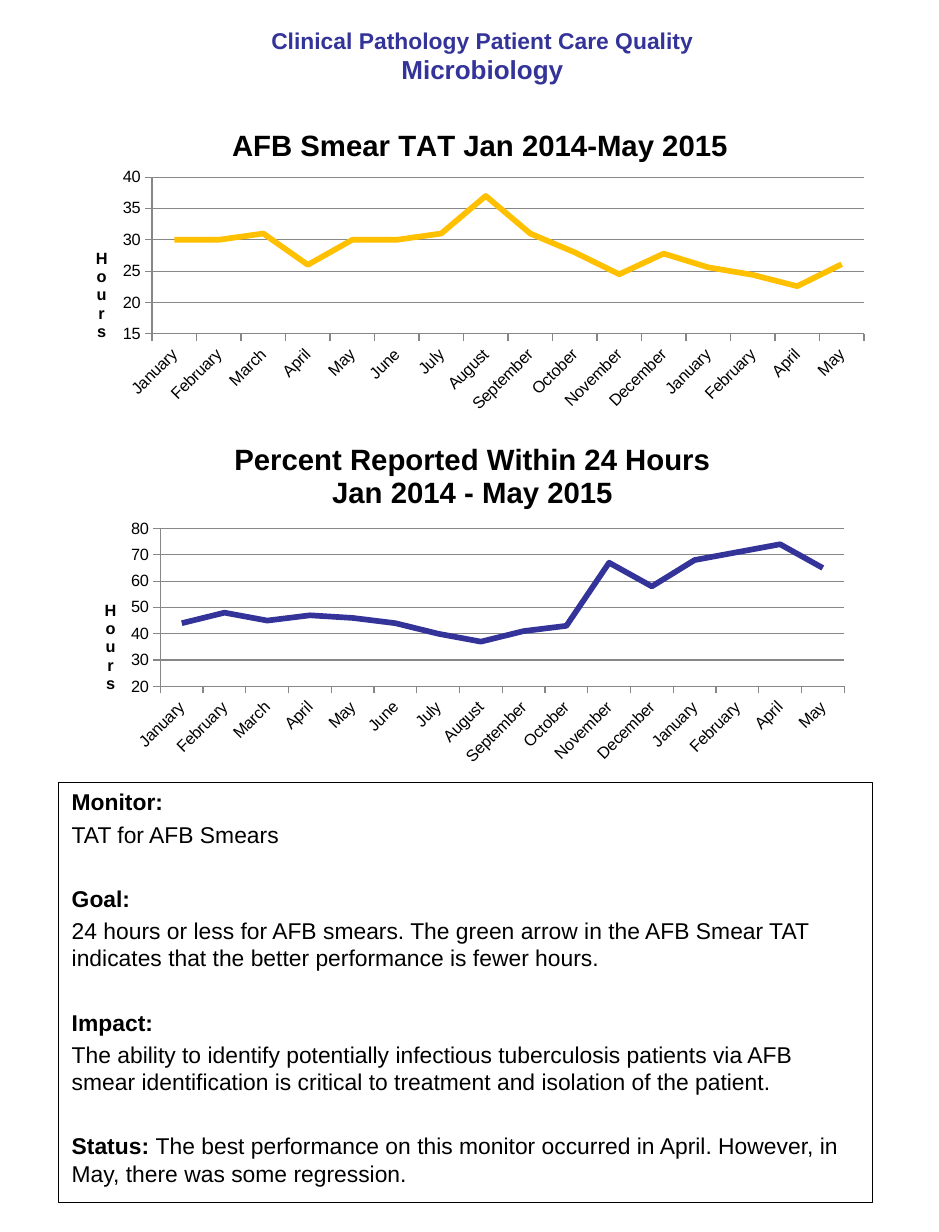
from pptx import Presentation
from pptx import util as u
from pptx.chart import data as chart_data
from pptx.dml.color import RGBColor
from pptx.enum import chart as chart_enum
from pptx.enum import text
from pptx.oxml import parse_xml
from pptx.oxml.ns import nsdecls, qn

BLACK = RGBColor(0x00, 0x00, 0x00)
INDIGO = RGBColor(0x33, 0x33, 0x99)
AMBER = RGBColor(0xFF, 0xC0, 0x00)
GRID_GRAY = RGBColor(0x87, 0x87, 0x87)
FONT_NAME = "Arial"

YEAR = ["January", "February", "March", "April", "May", "June", "July", "August",
        "September", "October", "November", "December"]
MONTHS = YEAR + YEAR[:5]
SMEAR_HOURS = [30, 30, 31, 26, 30, 30, 31, 37, 31, 28, 24.5, 27.8, 25.6, 24.4, 22.6, 26.1]
PERCENT_REPORTED = [44, 48, 45, 47, 46, 44, 40, 37, 41, 43, 67, 58, 68, 71, 74, 65]
CHART_MONTHS = YEAR + YEAR[:2] + YEAR[3:5]

MONITOR_TEXT = [
    [("Monitor:", True)],
    [("TAT for AFB Smears", False)],
    [("Goal:", True)],
    [("24 hours or less for AFB smears. The green arrow in the AFB Smear TAT "
      "indicates that the better performance is fewer hours.", False)],
    [("Impact:", True)],
    [("The ability to identify potentially infectious tuberculosis patients via AFB "
      "smear identification is critical to treatment and isolation of the patient.", False)],
    [("Status: ", True),
     ("The best performance on this monitor occurred in April. However, in May, "
      "there was some regression.", False)],
]


def format_font(font, size, color=BLACK, bold=False):
    font.name = FONT_NAME
    font.size = u.Pt(size)
    font.bold = bold
    font.color.rgb = color


def place(shape, left, top, width, height):
    shape.left, shape.top = u.Pt(left), u.Pt(top)
    shape.width, shape.height = u.Pt(width), u.Pt(height)


def fill_title(shape):
    place(shape, 36.7, 18, 518.4, 32.4)
    frame = shape.text_frame
    frame.text = "Clinical Pathology Patient Care Quality\nMicrobiology"
    frame.auto_size = text.MSO_AUTO_SIZE.NONE
    frame.vertical_anchor = text.MSO_ANCHOR.MIDDLE
    for paragraph, size in zip(frame.paragraphs, (14, 16)):
        paragraph.alignment = text.PP_ALIGN.CENTER
        format_font(paragraph.runs[0].font, size, INDIGO, True)


def fill_body(shape):
    place(shape, 36, 480, 499, 258)
    shape.line.color.rgb = BLACK
    shape.line.width = u.Pt(0.75)
    frame = shape.text_frame
    frame.auto_size = text.MSO_AUTO_SIZE.NONE
    frame.margin_left = frame.margin_right = u.Pt(8)
    for index, parts in enumerate(MONITOR_TEXT):
        paragraph = frame.paragraphs[0] if index == 0 else frame.add_paragraph()
        starts_section = index > 0 and parts[0][1]
        paragraph.space_before = u.Pt(22.5 if starts_section else 3)
        properties = paragraph._p.get_or_add_pPr()
        properties.set("marL", "0")
        properties.set("indent", "0")
        properties.append(parse_xml(f"<a:buNone {nsdecls('a')}/>"))
        for words, bold in parts:
            run = paragraph.add_run()
            run.text = words
            format_font(run.font, 14, BLACK, bold)


def set_layout(parent, index, inner=False, **fractions):
    for layout in parent.findall(qn("c:layout")):
        parent.remove(layout)
    target = '<c:layoutTarget val="inner"/>' if inner else ""
    modes = '<c:xMode val="edge"/><c:yMode val="edge"/>'
    values = "".join(f'<c:{name} val="{value}"/>' for name, value in fractions.items())
    parent.insert(index, parse_xml(
        f"<c:layout {nsdecls('c')}><c:manualLayout>{target}{modes}{values}"
        "</c:manualLayout></c:layout>"))


def set_chart_text(title, words, size, x, y):
    frame = title.text_frame
    frame.text = words
    for paragraph in frame.paragraphs:
        format_font(paragraph.runs[0].font, size, BLACK, True)
    set_layout(title.element, 1, x=x, y=y)


def format_axis(axis):
    axis.major_tick_mark = chart_enum.XL_TICK_MARK.OUTSIDE
    axis.minor_tick_mark = chart_enum.XL_TICK_MARK.NONE
    axis.format.line.color.rgb = GRID_GRAY
    format_font(axis.tick_labels.font, 10)


def add_line_chart(slide, box, heading, values, color, scale, title_y, axis_title_y, plot):
    source = chart_data.CategoryChartData()
    source.categories = CHART_MONTHS
    source.add_series("Series 1", values)
    chart = slide.shapes.add_chart(
        chart_enum.XL_CHART_TYPE.LINE, *map(u.Pt, box), source).chart
    chart.has_legend = False
    chart.has_title = True
    format_font(chart.font, 10)
    set_chart_text(chart.chart_title, heading, 18, 0.195, title_y)

    series = chart.plots[0].series[0]
    series.smooth = False
    series.marker.style = chart_enum.XL_MARKER_STYLE.NONE
    series.format.line.color.rgb = color
    series.format.line.width = u.Pt(3.5)

    format_axis(chart.category_axis)
    labels = chart.element.xpath(".//c:catAx/c:txPr/a:bodyPr")[0]
    labels.set("rot", "-2700000")
    labels.set("vert", "horz")

    axis = chart.value_axis
    format_axis(axis)
    axis.minimum_scale, axis.maximum_scale, axis.major_unit = scale
    axis.has_major_gridlines = True
    axis.major_gridlines.format.line.color.rgb = GRID_GRAY
    axis.has_title = True
    set_chart_text(axis.axis_title, "Hours", 10, 0.03, axis_title_y)
    direction = chart.element.xpath(".//c:valAx/c:title//a:bodyPr")[0]
    direction.set("rot", "0")
    direction.set("vert", "wordArtVert")

    x, y, width, height = plot
    set_layout(chart.element.xpath(".//c:plotArea")[0], 0, True,
               x=x, y=y, w=width, h=height)


def main():
    presentation = Presentation()
    presentation.slide_width, presentation.slide_height = u.Pt(576), u.Pt(756)
    slide = presentation.slides.add_slide(presentation.slide_layouts[1])
    fill_title(slide.shapes.title)
    fill_body(slide.placeholders[1])
    add_line_chart(slide, (48, 258, 480, 216),
                   "Percent Reported Within 24 Hours\nJan 2014 - May 2015",
                   PERCENT_REPORTED, INDIGO, (20, 80, 10), 0.05, 0.5,
                   (0.105, 0.307, 0.874, 0.449))
    add_line_chart(slide, (42, 60, 498, 198), "AFB Smear TAT Jan 2014-May 2015",
                   SMEAR_HOURS, AMBER, (15, 40, 5), 0.07, 0.455,
                   (0.103, 0.246, 0.877, 0.486))
    presentation.save("out.pptx")


if __name__ == "__main__":
    main()
